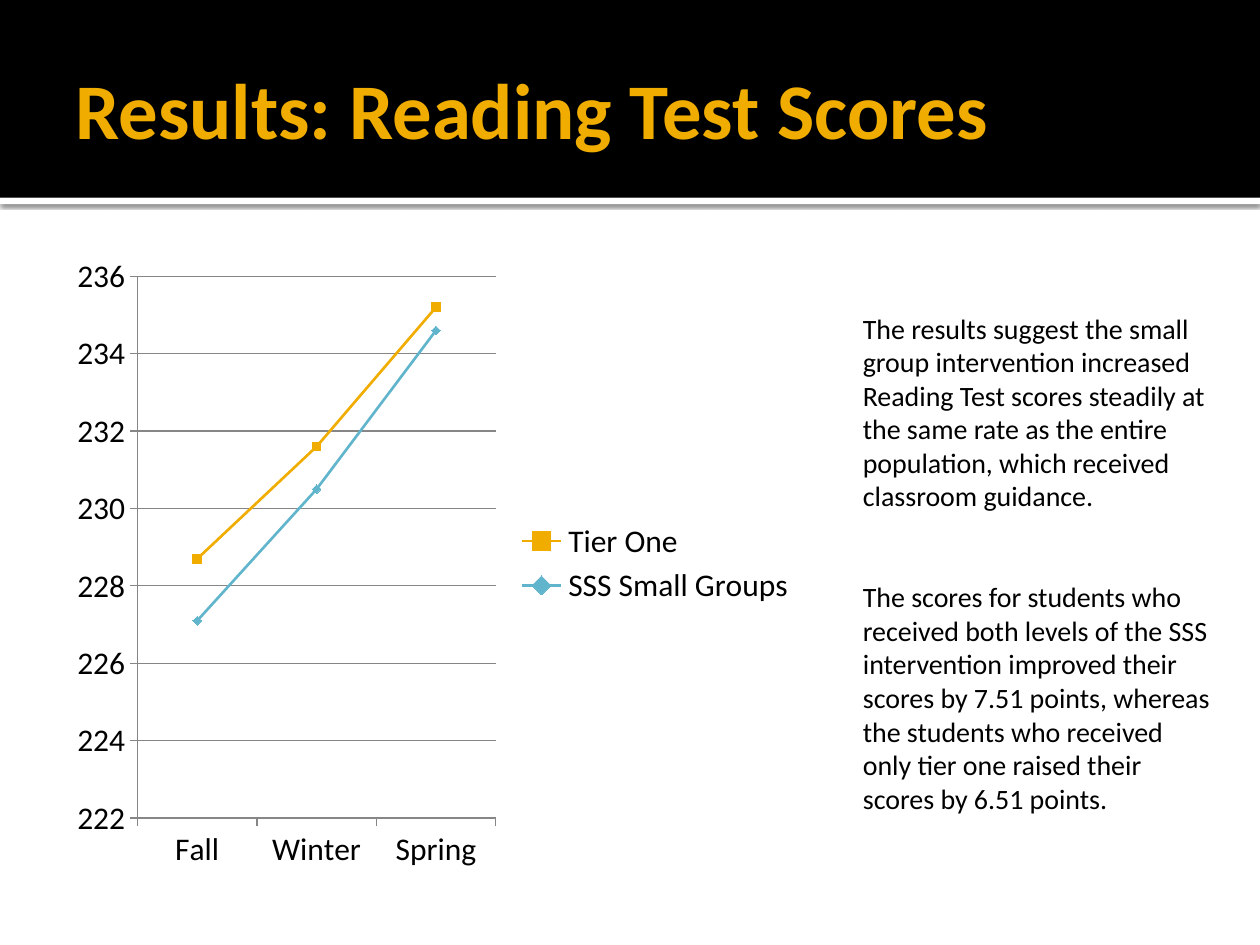
from lxml import etree
from pptx import Presentation
from pptx.chart.data import CategoryChartData
from pptx.dml.color import RGBColor
from pptx.enum import chart as ch, shapes, text
from pptx.oxml import parse_xml
from pptx.oxml.ns import nsdecls, qn
from pptx.util import Inches, Pt

BLACK = RGBColor(0x00, 0x00, 0x00)
WHITE = RGBColor(0xFF, 0xFF, 0xFF)
GOLD = RGBColor(0xF0, 0xAD, 0x00)
BLUE = RGBColor(0x60, 0xB5, 0xCC)
GRAY = RGBColor(0x86, 0x86, 0x86)
FONT = "Calibri"


def style_font(font, size, color, bold=False):
    font.name, font.size, font.bold = FONT, Pt(size), bold
    font.color.rgb = color


presentation = Presentation()
presentation.slide_width, presentation.slide_height = Inches(10), Inches(7.5)
slide = presentation.slides.add_slide(presentation.slide_layouts[5])

# Header band and the white strip below it, both behind the title
bands = []
for top, height, color in [(1.57, 0.05, WHITE), (0, 1.57, BLACK)]:
    band = slide.shapes.add_shape(
        shapes.MSO_SHAPE.RECTANGLE, 0, Inches(top), Inches(10), Inches(height))
    band.fill.solid()
    band.fill.fore_color.rgb = color
    band.line.fill.background()
    band.shadow.inherit = False
    bands.append(band)
title = slide.shapes.title
for band in bands:
    title._element.addprevious(band._element)

# Soft shadow under the white strip
effects = bands[0]._element.spPr.find(qn("a:effectLst"))
effects.append(parse_xml(
    f'<a:outerShdw {nsdecls("a")} blurRad="{Pt(2.5)}" dist="{Pt(0.8)}" dir="5400000">'
    '<a:srgbClr val="000000"><a:alpha val="60000"/></a:srgbClr></a:outerShdw>'))

# Title
title.left, title.top = Inches(0.5), Inches(0.17)
title.width, title.height = Inches(9), Inches(1.37)
frame = title.text_frame
frame.text = "Results: Reading Test Scores"
frame.vertical_anchor = text.MSO_ANCHOR.MIDDLE
frame.margin_left = Inches(0.1)
frame.margin_right = frame.margin_top = frame.margin_bottom = Inches(0.05)
frame.paragraphs[0].alignment = text.PP_ALIGN.LEFT
style_font(frame.paragraphs[0].runs[0].font, 45, GOLD, bold=True)

# Line chart of the scores
data = CategoryChartData()
data.categories = ["Fall", "Winter", "Spring"]
data.add_series("Tier One", (228.7, 231.6, 235.2))
data.add_series("SSS Small Groups", (227.1, 230.5, 234.6))
chart = slide.shapes.add_chart(
    ch.XL_CHART_TYPE.LINE_MARKERS,
    Inches(0.5), Inches(1.94), Inches(5.92), Inches(5.06), data).chart
style_font(chart.font, 18, BLACK)
chart.has_title = False
chart.has_legend = True
chart.legend.position = ch.XL_LEGEND_POSITION.RIGHT
chart.legend.include_in_layout = False

value_axis = chart.value_axis
value_axis.minimum_scale, value_axis.maximum_scale = 222, 236
value_axis.major_unit = 2
value_axis.has_major_gridlines = True
value_axis.major_gridlines.format.line.color.rgb = GRAY
for axis in (value_axis, chart.category_axis):
    axis.major_tick_mark = ch.XL_TICK_MARK.OUTSIDE
    axis.format.line.color.rgb = GRAY

markers = [ch.XL_MARKER_STYLE.SQUARE, ch.XL_MARKER_STYLE.DIAMOND]
for series, color, marker in zip(chart.plots[0].series, (GOLD, BLUE), markers):
    series.smooth = False
    series.format.line.color.rgb = color
    series.format.line.width = Pt(1.5)
    series.marker.style = marker
    series.marker.size = 5
    series.marker.format.fill.solid()
    series.marker.format.fill.fore_color.rgb = color
    series.marker.format.line.color.rgb = color

# Fixed plot area, leaving room for the legend
plot_area = chart._chartSpace.chart.plotArea
for old_layout in plot_area.findall(qn("c:layout")):
    plot_area.remove(old_layout)
layout = parse_xml(f'<c:layout {nsdecls("c")}><c:manualLayout/></c:layout>')
for tag, value in [("layoutTarget", "inner"), ("xMode", "edge"), ("yMode", "edge"),
                   ("x", "0.1"), ("y", "0.05"), ("w", "0.48"), ("h", "0.85")]:
    etree.SubElement(layout[0], qn(f"c:{tag}")).set("val", value)
plot_area.insert(0, layout)

# Findings
findings = [
    "The results suggest the small group intervention increased Reading Test scores "
    "steadily at the same rate as the entire population, which received classroom guidance.",
    "The scores for students who received both levels of the SSS intervention improved "
    "their scores by 7.51 points, whereas the students who received only tier one raised "
    "their scores by 6.51 points.",
]
box = slide.shapes.add_textbox(Inches(6.75), Inches(2.42), Inches(3), Inches(4.14))
frame = box.text_frame
frame.word_wrap = True
frame.text = "\n".join(findings)
for paragraph in frame.paragraphs:
    style_font(paragraph.runs[0].font, 16, BLACK)
frame.paragraphs[1].space_before = Pt(38.4)

presentation.save("out.pptx")
